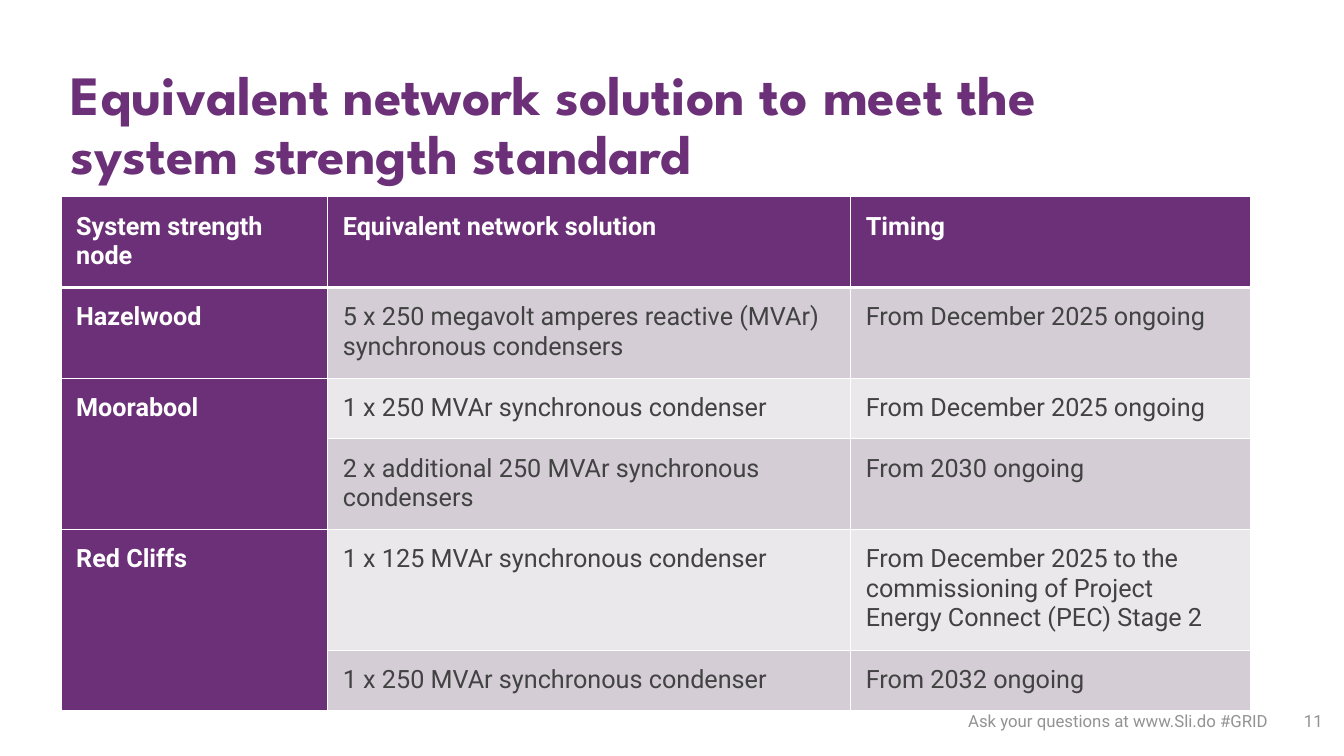
from lxml import etree
from pptx import Presentation, util as u
from pptx.dml import color
from pptx.enum import text
from pptx.oxml import ns

PURPLE, WHITE, DARK, GREY = "6B3077", "FFFFFF", "424242", "939393"
BANDS = ("D4CDD6", "EBE8EC")
COLUMN_WIDTHS = (6.72, 13.18, 10.07)
ROW_HEIGHTS = (2.11, 2.11, 1.4, 2.11, 2.82, 1.4)
ROWS = (
    ("System strength node", "Equivalent network solution", "Timing"),
    ("Hazelwood", "5 x 250 megavolt amperes reactive (MVAr) synchronous condensers",
     "From December 2025 ongoing"),
    ("Moorabool", "1 x 250 MVAr synchronous condenser", "From December 2025 ongoing"),
    ("", "2 x additional 250 MVAr synchronous condensers", "From 2030 ongoing"),
    ("Red Cliffs", "1 x 125 MVAr synchronous condenser",
     "From December 2025 to the commissioning of Project Energy Connect (PEC) Stage 2"),
    ("", "1 x 250 MVAr synchronous condenser", "From 2032 ongoing"),
)


def rgb(value):
    """Turn a hex string into a colour."""
    return color.RGBColor.from_string(value)


def style(para, name, size, tint, bold=False):
    """Set the font of a paragraph."""
    font = para.font
    font.name, font.size, font.bold = name, u.Pt(size), bold
    font.color.rgb = rgb(tint)


def add_text(page, left, top, width, height, wording):
    """Add a wrapping text box and return its frame."""
    frame = page.shapes.add_textbox(u.Cm(left), u.Cm(top), u.Cm(width), u.Cm(height)).text_frame
    frame.word_wrap = True
    frame.text = wording
    return frame


def add_title(page, left, top, width, height):
    """Place the heading."""
    para = add_text(page, left, top, width, height,
                    "Equivalent network solution to meet the system strength standard").paragraphs[0]
    para.line_spacing = 0.9
    style(para, "League Spartan", 39.6, PURPLE, True)


def add_borders(cell, bottom):
    """Draw white lines round a cell, with the given weight below it."""
    props = cell._tc.get_or_add_tcPr()
    for side, weight in (("lnL", 1), ("lnR", 1), ("lnT", 1), ("lnB", bottom)):
        line = etree.SubElement(props, ns.qn("a:" + side), w=str(u.Pt(weight)))
        fill = etree.SubElement(line, ns.qn("a:solidFill"))
        etree.SubElement(fill, ns.qn("a:srgbClr"), val=WHITE)


def add_solutions(page, left, top):
    """Place the table of solutions for each node."""
    table = page.shapes.add_table(len(ROWS), len(COLUMN_WIDTHS), u.Cm(left), u.Cm(top),
                                  u.Cm(sum(COLUMN_WIDTHS)), u.Cm(sum(ROW_HEIGHTS))).table
    for column, width in zip(table.columns, COLUMN_WIDTHS):
        column.width = u.Cm(width)
    for r, (row, height) in enumerate(zip(ROWS, ROW_HEIGHTS)):
        table.rows[r].height = u.Cm(height)
        for c, wording in enumerate(row):
            cell = table.cell(r, c)
            heading = r == 0 or c == 0
            add_borders(cell, 3 if r == 0 else 1)
            cell.fill.solid()
            cell.fill.fore_color.rgb = rgb(PURPLE if heading else BANDS[(r - 1) % 2])
            cell.margin_left = cell.margin_right = u.Cm(0.38)
            cell.margin_top = cell.margin_bottom = u.Cm(0.38)
            cell.text = wording
            style(cell.text_frame.paragraphs[0], "Roboto", 18, WHITE if heading else DARK, heading)
    for r, row in enumerate(ROWS):
        if not row[0]:
            table.cell(r - 1, 0).merge(table.cell(r, 0))


def add_footer(page, left, top, width, height):
    """Place the question line and the page number."""
    number_width, gap = 1.52, 0.13
    line_width = width - number_width - gap
    for x, part_width, wording, align in (
            (left, line_width, "Ask your questions at www.Sli.do #GRID", text.PP_ALIGN.RIGHT),
            (left + line_width + gap, number_width, "11", text.PP_ALIGN.CENTER)):
        frame = add_text(page, x, top, part_width, height, wording)
        frame.vertical_anchor = text.MSO_ANCHOR.MIDDLE
        frame.paragraphs[0].alignment = align
        style(frame.paragraphs[0], "Roboto", 12, GREY)


def main():
    """Build the slide and save it."""
    deck = Presentation()
    deck.slide_width, deck.slide_height = u.Cm(33.87), u.Cm(19.05)
    page = deck.slides.add_slide(deck.slide_layouts[6])
    add_title(page, 1.53, 1.57, 27.46, 3.38)
    add_solutions(page, 1.54, 4.96)
    add_footer(page, 20.45, 17.65, 13.41, 1.02)
    deck.save("out.pptx")


if __name__ == "__main__":
    main()
